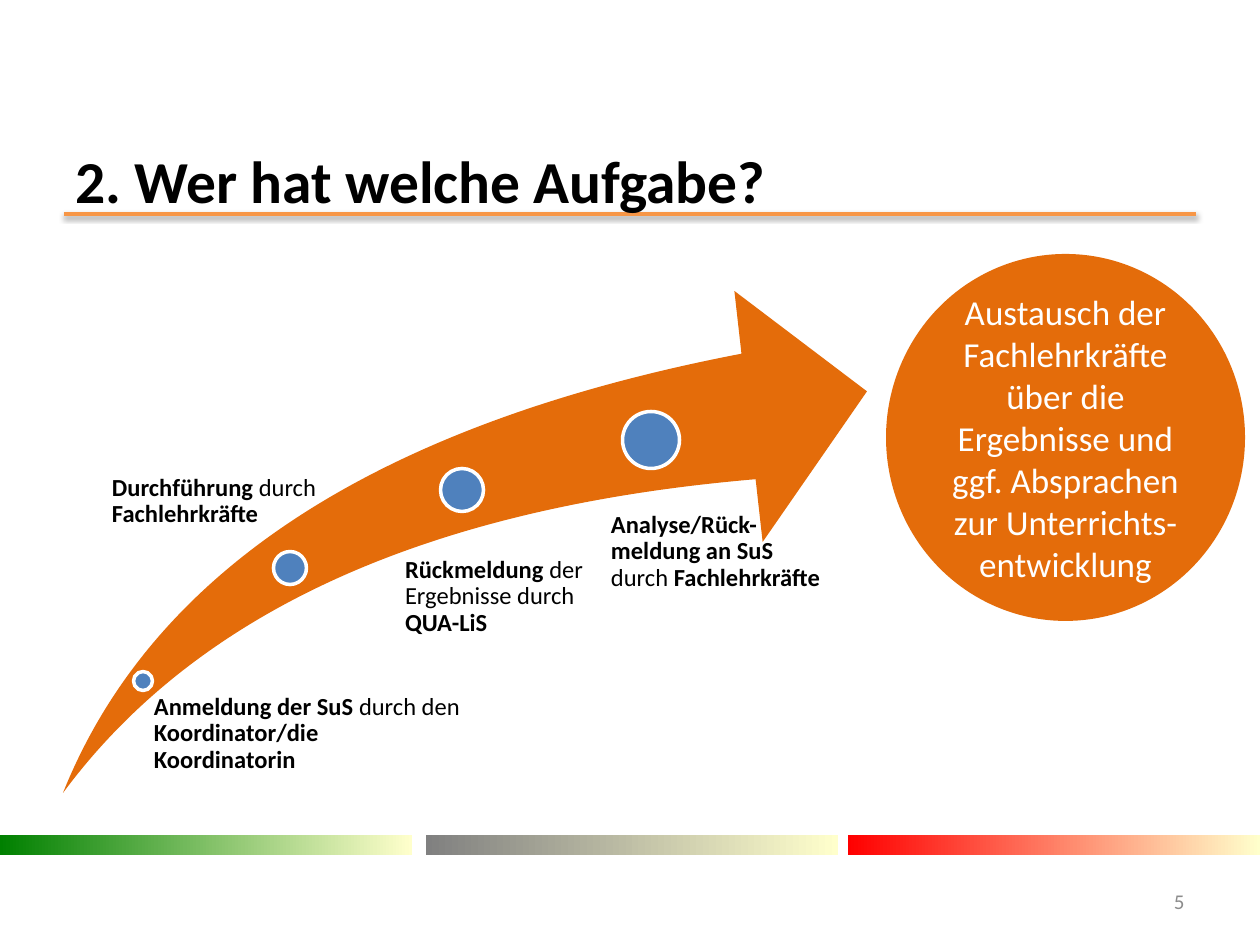
import lxml.etree
import pptx
import pptx.dml.color
import pptx.enum.shapes
import pptx.enum.text
import pptx.oxml
import pptx.oxml.ns
import pptx.util

RGB = pptx.dml.color.RGBColor
KIND = pptx.enum.shapes.MSO_SHAPE
ALIGN = pptx.enum.text.PP_ALIGN
MID = pptx.enum.text.MSO_ANCHOR.MIDDLE
TOP = pptx.enum.text.MSO_ANCHOR.TOP

BLACK = RGB(0x00, 0x00, 0x00)
WHITE = RGB(0xFF, 0xFF, 0xFF)
GRAY = RGB(0x8C, 0x8C, 0x8C)
ORANGE = RGB(0xE4, 0x6C, 0x0A)
RULE = RGB(0xF7, 0x96, 0x46)
BLUE = RGB(0x4F, 0x81, 0xBD)
CREAM = RGB(0xFF, 0xFF, 0xCC)

# Band: left edge, start colour
BANDS = [
    (0, RGB(0x00, 0x80, 0x00)),
    (426, RGB(0x80, 0x80, 0x80)),
    (848, RGB(0xFF, 0x00, 0x00)),
]
BAND_TOP, BAND_WIDE, BAND_HIGH = 835, 412, 20

TITLE = "2. Wer hat welche Aufgabe?"
GOAL = ("Austausch der Fachlehrkräfte über die Ergebnisse und "
        "ggf. Absprachen zur Unterrichts-entwicklung")

# Step: dot centre and size, text box, left inset, runs (text, bold)
STEPS = [
    ((143, 681, 19), (144, 694, 318, 77), 10,
     [("Anmeldung der SuS ", True), ("durch den", False),
      (" Koordinator/die Koordinatorin", True)]),
    ((290, 568, 33), (94, 475, 300, 52), 18,
     [("Durchführung", True), (" durch ", False), ("Fachlehrkräfte", True)]),
    ((462, 490, 43), (382, 557, 231, 103), 23,
     [("Rückmeldung ", True), ("der Ergebnisse durch ", False),
      ("QUA-LiS", True)]),
    ((651, 440, 57), (581, 512, 251, 169), 30,
     [("Analyse/Rück-meldung an SuS ", True), ("durch ", False),
      ("Fachlehrkräfte", True)]),
]

SHADOW = """<a:effectLst %s>
  <a:outerShdw blurRad="39370" dist="20320" dir="5400000" rotWithShape="0">
    <a:srgbClr val="000000"><a:alpha val="38000"/></a:srgbClr>
  </a:outerShdw>
</a:effectLst>""" % pptx.oxml.ns.nsdecls("a")


def px(num):
    return pptx.util.Emu(round(num * 914400 / 126))


def put(item, **vals):
    for key, val in vals.items():
        setattr(item, key, val)


def write(frame, runs, size, color, align=ALIGN.LEFT, anchor=MID, **rest):
    """Fill a text frame with one paragraph of (text, bold) runs."""
    put(frame, word_wrap=True, vertical_anchor=anchor)
    para = frame.paragraphs[0]
    put(para, alignment=align, **rest)
    for text, bold in runs:
        run = para.add_run()
        run.text = text
        put(run.font, name="Calibri", size=pptx.util.Pt(size), bold=bold)
        run.font.color.rgb = color


def label(slide, box):
    return slide.shapes.add_textbox(*map(px, box)).text_frame


def shape(slide, kind, box, color=None):
    item = slide.shapes.add_shape(kind, *map(px, box))
    item.shadow.inherit = False
    item.line.fill.background()
    if color is not None:
        item.fill.solid()
        item.fill.fore_color.rgb = color
    return item


def frame(slide):
    line = slide.shapes.add_connector(
        pptx.enum.shapes.MSO_CONNECTOR.STRAIGHT,
        px(64), px(214), px(1196), px(214))
    line.line.color.rgb = RULE
    line.line.width = pptx.util.Pt(2)
    line._element.spPr.append(lxml.etree.fromstring(
        SHADOW, pptx.oxml.oxml_parser))
    for left, color in BANDS:
        band = shape(slide, KIND.RECTANGLE,
                     (left, BAND_TOP, BAND_WIDE, BAND_HIGH))
        band.fill.gradient()
        band.fill.gradient_angle = 0
        for stop, tone in zip(band.fill.gradient_stops, (color, CREAM)):
            stop.color.rgb = tone
    write(label(slide, (63, 155, 1134, 49)), [(TITLE, True)], 34, BLACK)
    write(label(slide, (903, 876, 294, 50)), [("5", False)], 12, GRAY,
          ALIGN.RIGHT)


def steps(slide):
    arrow = shape(slide, KIND.SWOOSH_ARROW, (63, 291, 804, 502), ORANGE)
    arrow.adjustments[0] = arrow.adjustments[1] = 0.25
    for (mid, row, size), box, inset, runs in STEPS:
        dot = shape(slide, KIND.OVAL,
                    (mid - size / 2, row - size / 2, size, size), BLUE)
        dot.line.color.rgb = WHITE
        dot.line.width = pptx.util.Pt(2)
        text = label(slide, box)
        put(text, margin_left=px(inset), margin_top=0, margin_right=0,
            margin_bottom=0)
        write(text, runs, 14, BLACK, anchor=TOP, line_spacing=0.9)


def main():
    deck = pptx.Presentation()
    put(deck, slide_width=px(1260), slide_height=px(945))
    slide = deck.slides.add_slide(deck.slide_layouts[6])
    frame(slide)
    steps(slide)
    goal = shape(slide, KIND.OVAL, (886, 254, 359, 367), ORANGE)
    write(goal.text_frame, [(GOAL, False)], 20, WHITE, ALIGN.CENTER)
    deck.save("out.pptx")


if __name__ == "__main__":
    main()
